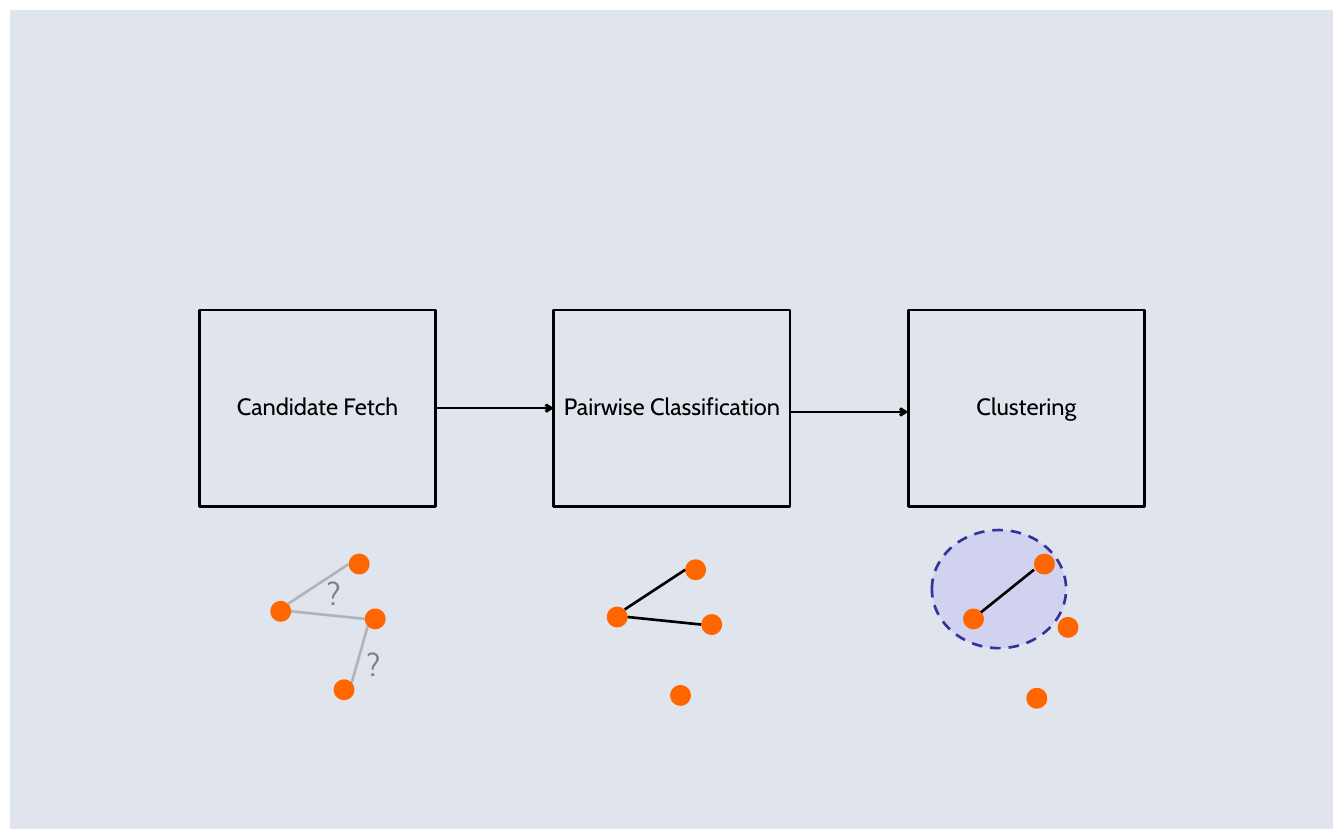
import lxml.etree
import pptx
import pptx.dml.color
import pptx.enum.dml
import pptx.enum.shapes
import pptx.enum.text
import pptx.oxml.ns
import pptx.util

Inches = pptx.util.Inches
Pt = pptx.util.Pt
RGBColor = pptx.dml.color.RGBColor
Shapes = pptx.enum.shapes.MSO_SHAPE
qn = pptx.oxml.ns.qn

BACKDROP = RGBColor(0xE0, 0xE4, 0xED)
WHITE = RGBColor(0xFF, 0xFF, 0xFF)
BLACK = RGBColor(0, 0, 0)
ORANGE = RGBColor(0xFF, 0x66, 0x00)
GREY = RGBColor(0x80, 0x80, 0x80)
DARK_GREY = RGBColor(0x59, 0x59, 0x59)
LILAC = RGBColor(0xD1, 0xD1, 0xF0)
INDIGO = RGBColor(0x33, 0x33, 0x99)

WIDTH, HEIGHT = 14.22, 8.89
STAGE_LEFT, STAGE_TOP, STAGE_WIDTH, STAGE_HEIGHT = 2.11, 3.28, 2.5, 2.08
STAGE_STEP = 3.75
STAGES = ["Candidate Fetch", "Pairwise Classification", "Clustering"]
DOT_SIZE = 0.22
DOTS = [(0, 0.5), (1, 0.58), (0.83, 0), (0.67, 1.33)]
LINKS = [((1, 0.69), (0.22, 0.61)), ((0.83, 0.11), (0.19, 0.53))]
OPEN_LINK = ((0.86, 1.37), (1.03, 0.77))
CANDIDATES = (2.86, 5.86)
PAIRS = (6.42, 5.92)
CLUSTER_DOTS = [(10.19, 6.44), (11.19, 6.53), (10.94, 5.86), (10.86, 7.28)]


class Diagram:
    """Draws styled elements on the current slide."""

    def __init__(self, page, font="Cabin", weight=2):
        self.page = page
        self.font = font
        self.weight = weight

    def shape(self, kind, left, top, width, height, fill=None, line=None, weight=None):
        shape = self.page.shapes.add_shape(
            kind, Inches(left), Inches(top), Inches(width), Inches(height))
        shape.shadow.inherit = False
        if fill is None:
            shape.fill.background()
        else:
            shape.fill.solid()
            shape.fill.fore_color.rgb = fill
        if line is None:
            shape.line.fill.background()
        else:
            shape.line.color.rgb = line
            shape.line.width = Pt(weight or self.weight)
        return shape

    def add_text(self, para, text, size, color):
        span = para.add_run()
        span.text = text
        span.font.name = self.font
        span.font.size = Pt(size)
        span.font.color.rgb = color

    def stage(self, left, title):
        box = self.shape(Shapes.RECTANGLE, left, STAGE_TOP, STAGE_WIDTH, STAGE_HEIGHT,
                         line=BLACK)
        frame = box.text_frame
        frame.word_wrap = True
        frame.margin_left = frame.margin_right = Inches(0.05)
        frame.vertical_anchor = pptx.enum.text.MSO_ANCHOR.MIDDLE
        para = frame.paragraphs[0]
        para.alignment = pptx.enum.text.PP_ALIGN.CENTER
        para.line_spacing = 0.9
        self.add_text(para, title, 18, BLACK)
        return box

    def line(self, start, end, color=BLACK, opacity=None, arrow=False):
        connector = self.page.shapes.add_connector(
            pptx.enum.shapes.MSO_CONNECTOR.STRAIGHT,
            *(Inches(value) for value in (*start, *end)))
        connector.line.color.rgb = color
        connector.line.width = Pt(self.weight)
        properties = connector.element.spPr
        outline = properties.find(qn("a:ln"))
        if opacity is not None:
            alpha = lxml.etree.SubElement(outline.find(".//" + qn("a:srgbClr")), qn("a:alpha"))
            alpha.set("val", str(opacity * 1000))
        if arrow:
            lxml.etree.SubElement(outline, qn("a:tailEnd")).set("type", "arrow")
        lxml.etree.SubElement(properties, qn("a:effectLst"))
        return connector

    def dot(self, left, top):
        self.shape(Shapes.OVAL, left, top, DOT_SIZE, DOT_SIZE, fill=ORANGE)

    def graph(self, origin, links, color=BLACK, opacity=None):
        def place(point):
            return origin[0] + point[0], origin[1] + point[1]

        for dot in DOTS:
            self.dot(*place(dot))
        for start, end in links:
            self.line(place(start), place(end), color, opacity)

    def question(self, left, top):
        box = self.page.shapes.add_textbox(
            Inches(left), Inches(top), Inches(0.33), Inches(0.5))
        box.text_frame.word_wrap = False
        self.add_text(box.text_frame.paragraphs[0], "?", 24, GREY)


def main():
    deck = pptx.Presentation()
    deck.slide_width, deck.slide_height = Inches(WIDTH), Inches(HEIGHT)
    page = deck.slides.add_slide(deck.slide_layouts[6])
    page.background.fill.solid()
    page.background.fill.fore_color.rgb = BACKDROP
    diagram = Diagram(page)

    diagram.shape(Shapes.RECTANGLE, 0, 0, WIDTH, HEIGHT, BACKDROP, WHITE, 16)
    cluster = diagram.shape(Shapes.OVAL, 9.86, 5.61, 1.42, 1.25, LILAC, INDIGO)
    cluster.line.dash_style = pptx.enum.dml.MSO_LINE.DASH

    boxes = [diagram.stage(STAGE_LEFT + index * STAGE_STEP, title)
             for index, title in enumerate(STAGES)]
    flow = diagram.line((4.61, 4.32), (5.86, 4.32), arrow=True)
    flow.begin_connect(boxes[0], 3)
    flow.end_connect(boxes[1], 1)
    diagram.line((8.36, 4.36), (9.61, 4.36), arrow=True)

    diagram.graph(CANDIDATES, LINKS + [OPEN_LINK], DARK_GREY, 35)
    diagram.graph(PAIRS, LINKS)
    for dot in CLUSTER_DOTS:
        diagram.dot(*dot)
    diagram.line((10.94, 6.03), (10.38, 6.48))
    diagram.question(3.78, 6.78)
    diagram.question(3.36, 6.03)

    deck.save("out.pptx")


if __name__ == "__main__":
    main()
